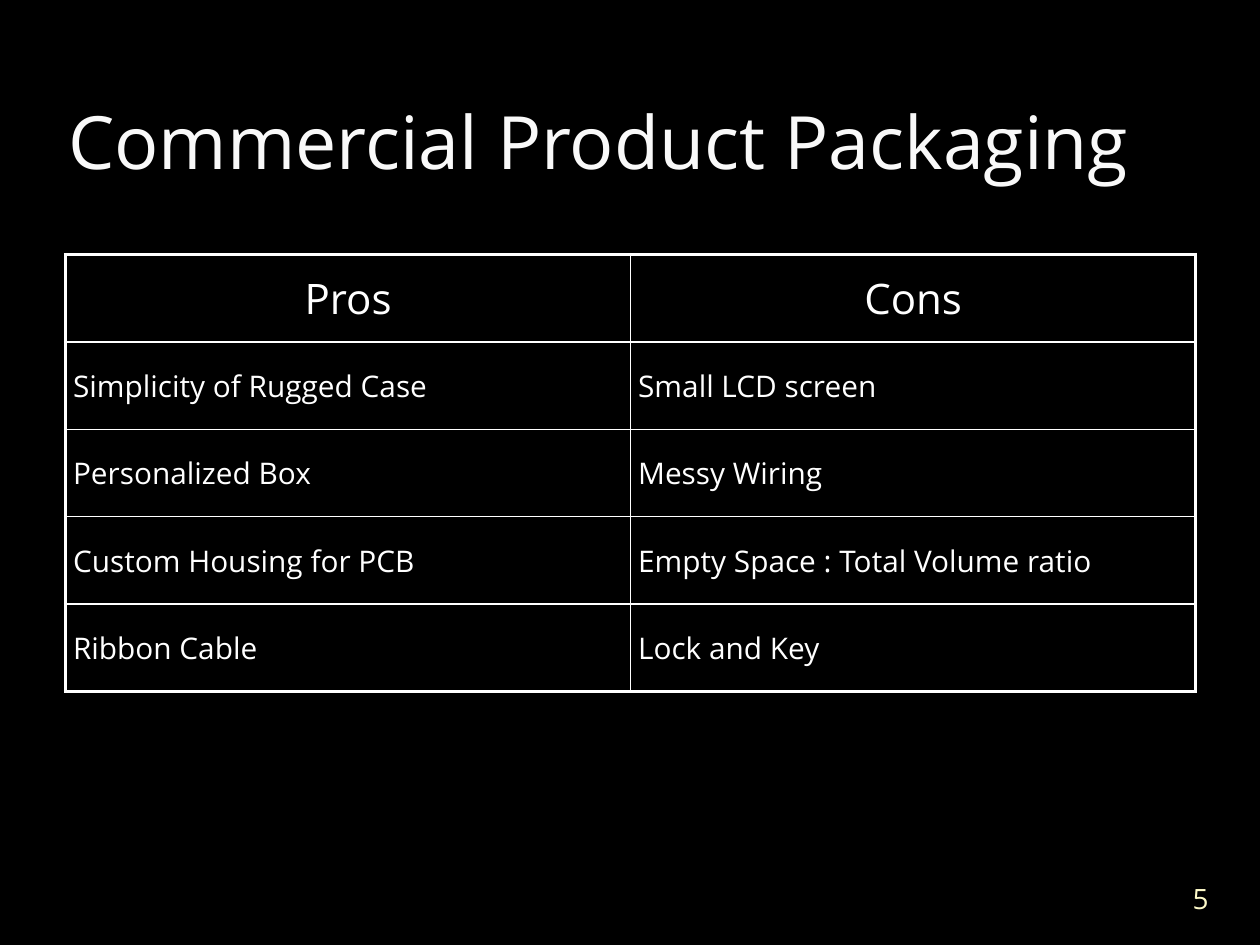
from dataclasses import dataclass

from lxml import etree
from pptx import Presentation
from pptx.dml.color import RGBColor
from pptx.enum.text import MSO_ANCHOR, PP_ALIGN
from pptx.oxml.ns import qn
from pptx.util import Inches, Pt

LEFT, MID = PP_ALIGN.LEFT, PP_ALIGN.CENTER
LOW, CORE = MSO_ANCHOR.BOTTOM, MSO_ANCHOR.MIDDLE


@dataclass(frozen=True)
class Theme:
    """Colours, font, type sizes and line widths of the slide."""
    font: str = "Open Sans"
    back: str = "000000"
    title: str = "F9F9F9"
    text: str = "FFFFFF"
    page: str = "FEFAC9"
    title_size: int = 42
    head_size: int = 24
    body_size: int = 17
    page_size: int = 16
    thick: float = 2.25
    thin: float = 1


THEME = Theme()
ROWS = [
    ("Pros", "Cons"),
    ("Simplicity of Rugged Case", "Small LCD screen"),
    ("Personalized Box", "Messy Wiring"),
    ("Custom Housing for PCB", "Empty Space : Total Volume ratio"),
    ("Ribbon Cable", "Lock and Key"),
]


def write(frame, text, size, color, align=LEFT):
    """Put formatted text into the first paragraph of a frame."""
    para = frame.paragraphs[0]
    para.alignment = align
    run = para.add_run()
    run.text = text
    run.font.name = THEME.font
    run.font.size = Pt(size)
    run.font.color.rgb = RGBColor.from_string(color)


def inset(item, gap):
    """Set all four margins of a cell or text frame."""
    item.margin_left = item.margin_right = Inches(gap)
    item.margin_top = item.margin_bottom = Inches(gap)


def add_text(slide, box, text, anchor, gap, wrap, **style):
    """Add a text box with one formatted paragraph."""
    frame = slide.shapes.add_textbox(*map(Inches, box)).text_frame
    frame.word_wrap = wrap
    frame.vertical_anchor = anchor
    inset(frame, gap)
    write(frame, text, **style)


def add_edge(cell, side, width):
    """Draw one solid border of a cell."""
    props = cell._tc.get_or_add_tcPr()
    line = etree.SubElement(props, qn(f"a:ln{side}"), w=str(Pt(width)))
    fill = etree.SubElement(line, qn("a:solidFill"))
    etree.SubElement(fill, qn("a:srgbClr"), val=THEME.text)


def add_grid(slide, box, rows):
    """Add the table with a thick frame and thin inner lines."""
    high, wide = len(rows), len(rows[0])
    table = slide.shapes.add_table(high, wide, *map(Inches, box)).table
    for i, row in enumerate(rows):
        for j, text in enumerate(row):
            cell = table.cell(i, j)
            cell.vertical_anchor = CORE
            inset(cell, 0.06)
            head = i == 0
            write(cell.text_frame, text, color=THEME.text,
                  size=THEME.head_size if head else THEME.body_size,
                  align=MID if head else LEFT)
            outer = {"L": j == 0, "R": j == wide - 1,
                     "T": head, "B": i == high - 1}
            for side, edge in outer.items():
                add_edge(cell, side, THEME.thick if edge else THEME.thin)
            cell.fill.background()


def add_title(slide, box, text):
    """Add the slide title, resting on the bottom of its box."""
    add_text(slide, box, text, LOW, 0.04, True,
             size=THEME.title_size, color=THEME.title)


def add_page(slide, box, text):
    """Add the page number, centred in its box."""
    add_text(slide, box, text, CORE, 0.05, False,
             size=THEME.page_size, color=THEME.page, align=MID)


def main():
    """Build the slide and save it."""
    deck = Presentation()
    deck.slide_width, deck.slide_height = Inches(10), Inches(7.5)
    slide = deck.slides.add_slide(deck.slide_layouts[6])
    fill = slide.background.fill
    fill.solid()
    fill.fore_color.rgb = RGBColor.from_string(THEME.back)
    add_page(slide, (9.33, 6.95, 0.4, 0.36), "5")
    add_title(slide, (0.5, 0, 9, 1.5), "Commercial Product Packaging")
    add_grid(slide, (0.52, 2.02, 8.97, 3.47), ROWS)
    deck.save("out.pptx")


if __name__ == "__main__":
    main()
